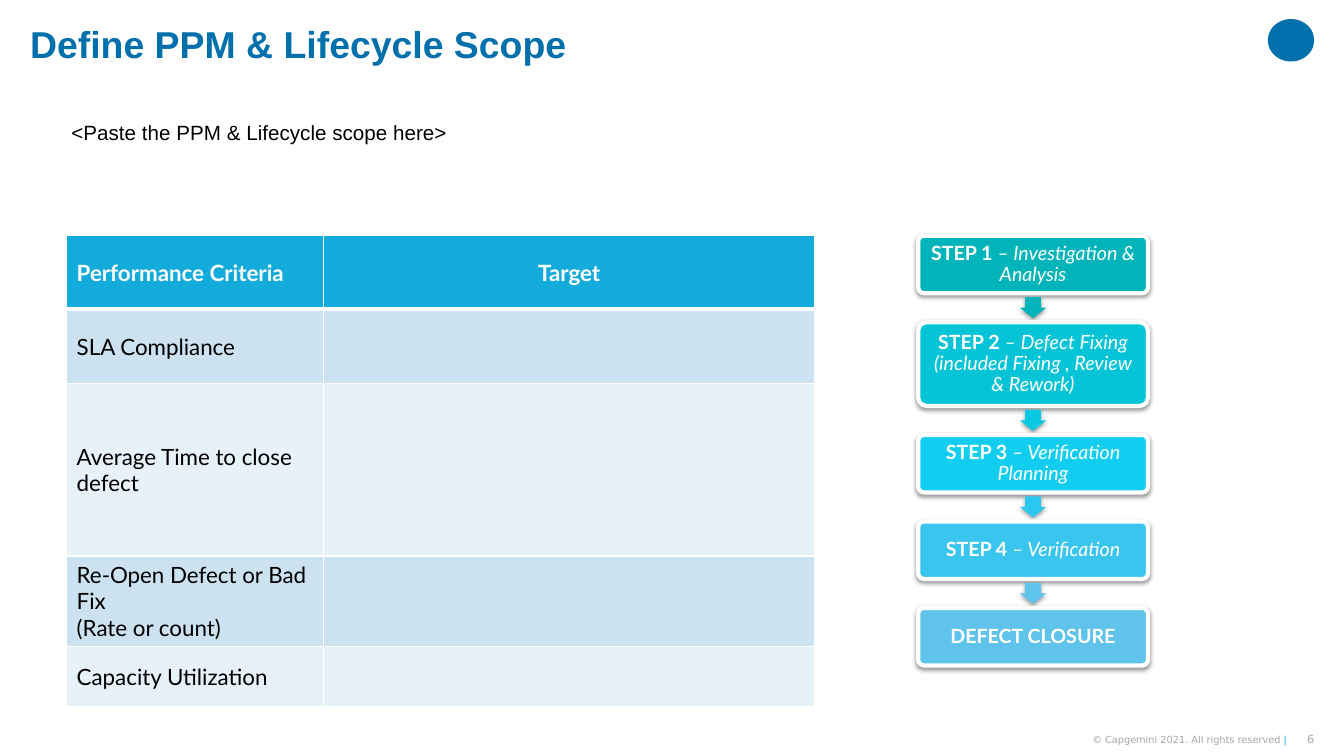
from dataclasses import dataclass

import lxml.etree
import pptx
import pptx.dml.color
import pptx.enum.shapes
import pptx.enum.text
import pptx.oxml.ns
import pptx.util

Cm = pptx.util.Cm
Pt = pptx.util.Pt
Align = pptx.enum.text.PP_ALIGN
Anchor = pptx.enum.text.MSO_ANCHOR
Preset = pptx.enum.shapes.MSO_SHAPE
qn = pptx.oxml.ns.qn


@dataclass(frozen=True)
class Theme:
    navy: str = "0070AD"
    cyan: str = "12ABDB"
    white: str = "FFFFFF"
    black: str = "000000"
    grey: str = "A6A6A6"
    bands: tuple[str, str] = ("CCE2F1", "E7F1F8")
    heading_font: str = "Arial"
    body_font: str = "Lato"
    footer_font: str = "DejaVu Sans"
    title_size: float = 26.7
    note_size: float = 14.7
    table_size: float = 16
    step_size: float = 14
    number_size: float = 8
    footer_size: float = 7


THEME = Theme()


@dataclass(frozen=True)
class Span:
    text: str
    size: float
    font: str
    color: str
    bold: bool = False
    italic: bool = False


@dataclass(frozen=True)
class Box:
    left: float
    top: float
    width: float
    height: float

    def lengths(self) -> tuple:
        return Cm(self.left), Cm(self.top), Cm(self.width), Cm(self.height)


@dataclass(frozen=True)
class Step:
    name: str
    detail: str
    height: float
    color: str
    arrow_color: str = ""


@dataclass(frozen=True)
class Criterion:
    lines: tuple[str, ...]
    height: float


STEPS = (
    Step("STEP 1 ", "– Investigation & Analysis", 1.45, "00B4B9", "00B4B9"),
    Step("STEP 2 ", "– Defect Fixing (included Fixing , Review & Rework)", 2.11, "06C4D7", "09C8E1"),
    Step("STEP 3 ", "– Verification Planning", 1.45, "11CEF1", "2CC7EE"),
    Step("STEP 4 ", "– Verification", 1.45, "39C5ED", "5FC3EB"),
    Step("DEFECT CLOSURE", "", 1.45, "5FC3EB"),
)
CRITERIA = (
    Criterion(("SLA Compliance",), 1.88),
    Criterion(("Average Time to close defect",), 4.34),
    Criterion(("Re-Open Defect or Bad Fix", "(Rate or count)"), 1.93),
    Criterion(("Capacity Utilization",), 1.52),
)
HEADER_HEIGHT = 1.85
COLUMN_WIDTHS = (6.48, 12.37)
STEP_LEFT, STEP_TOP, STEP_WIDTH, STEP_GAP = 23.14, 5.94, 5.79, 0.73
ARROW_WIDTH, ARROW_HEIGHT = 0.66, 0.53


def rgb(color: str) -> pptx.dml.color.RGBColor:
    return pptx.dml.color.RGBColor.from_string(color)


def write(paragraph, spans: list[Span], align=Align.LEFT) -> None:
    paragraph.alignment = align
    for span in spans:
        run = paragraph.add_run()
        run.text = span.text
        run.font.size = Pt(span.size)
        run.font.name = span.font
        run.font.bold = span.bold
        run.font.italic = span.italic
        run.font.color.rgb = rgb(span.color)


def set_frame(frame, inset: float, anchor=Anchor.MIDDLE) -> None:
    frame.word_wrap = True
    frame.vertical_anchor = anchor
    frame.margin_left = frame.margin_right = Cm(inset)
    frame.margin_top = frame.margin_bottom = Cm(min(inset, 0.2))


def add_label(slide, box: Box, spans: list[Span], inset: float, align=Align.LEFT) -> None:
    frame = slide.shapes.add_textbox(*box.lengths()).text_frame
    set_frame(frame, inset)
    write(frame.paragraphs[0], spans, align)


def add_preset(slide, preset, box: Box, color: str):
    shape = slide.shapes.add_shape(preset, *box.lengths())
    shape.shadow.inherit = False
    shape.fill.solid()
    shape.fill.fore_color.rgb = rgb(color)
    shape.line.fill.background()
    return shape


def cast_shadow(shape) -> None:
    effects = shape._element.spPr.find(qn("a:effectLst"))
    shadow = lxml.etree.SubElement(
        effects, qn("a:outerShdw"), blurRad=str(Pt(3.1)), dist=str(Pt(1.6)), dir="5400000", rotWithShape="0"
    )
    color = lxml.etree.SubElement(shadow, qn("a:srgbClr"), val=THEME.black)
    lxml.etree.SubElement(color, qn("a:alpha"), val="38000")


def style_cell(cell, color: str, top: float, bottom: float) -> None:
    cell.fill.solid()
    cell.fill.fore_color.rgb = rgb(color)
    cell.vertical_anchor = Anchor.MIDDLE
    properties = cell._tc.get_or_add_tcPr()
    edges = (("a:lnL", 1), ("a:lnR", 1), ("a:lnT", top), ("a:lnB", bottom))
    for position, (tag, width) in enumerate(edges):
        edge = lxml.etree.Element(qn(tag), w=str(Pt(width)))
        solid = lxml.etree.SubElement(edge, qn("a:solidFill"))
        lxml.etree.SubElement(solid, qn("a:srgbClr"), val=THEME.white)
        properties.insert(position, edge)


def add_criteria_table(slide) -> None:
    heights = [HEADER_HEIGHT] + [criterion.height for criterion in CRITERIA]
    box = Box(1.68, 5.94, sum(COLUMN_WIDTHS), sum(heights))
    table = slide.shapes.add_table(len(heights), len(COLUMN_WIDTHS), *box.lengths()).table
    for column, width in zip(table.columns, COLUMN_WIDTHS):
        column.width = Cm(width)
    for index, (row, height) in enumerate(zip(table.rows, heights)):
        row.height = Cm(height)
        color = THEME.bands[(index - 1) % 2] if index else THEME.cyan
        for cell in row.cells:
            style_cell(cell, color, 3 if index == 1 else 1, 1 if index else 3)
    headings = (("Performance Criteria", Align.LEFT), ("Target", Align.CENTER))
    for cell, (heading, align) in zip(table.rows[0].cells, headings):
        span = Span(heading, THEME.table_size, THEME.body_font, THEME.white, bold=True)
        write(cell.text_frame.paragraphs[0], [span], align)
    for index, criterion in enumerate(CRITERIA, start=1):
        frame = table.cell(index, 0).text_frame
        for number, line in enumerate(criterion.lines):
            paragraph = frame.add_paragraph() if number else frame.paragraphs[0]
            write(paragraph, [Span(line, THEME.table_size, THEME.body_font, THEME.black)])


def add_steps(slide) -> None:
    top = STEP_TOP
    for step in STEPS:
        card = add_preset(
            slide, Preset.ROUNDED_RECTANGLE, Box(STEP_LEFT, top, STEP_WIDTH, step.height), step.color
        )
        card.adjustments[0] = 0.1
        card.line.color.rgb = rgb(THEME.white)
        card.line.width = Pt(3)
        cast_shadow(card)
        set_frame(card.text_frame, 0.2)
        spans = [Span(step.name, THEME.step_size, THEME.body_font, THEME.white, bold=True)]
        if step.detail:
            spans.append(Span(step.detail, THEME.step_size, THEME.body_font, THEME.white, italic=True))
        paragraph = card.text_frame.paragraphs[0]
        paragraph.line_spacing = 0.9
        write(paragraph, spans, Align.CENTER)
        top += step.height
        if step.arrow_color:
            left = STEP_LEFT + (STEP_WIDTH - ARROW_WIDTH) / 2
            box = Box(left, top + (STEP_GAP - ARROW_HEIGHT) / 2, ARROW_WIDTH, ARROW_HEIGHT)
            arrow = add_preset(slide, Preset.DOWN_ARROW, box, step.arrow_color)
            arrow.adjustments[0] = 0.6
            arrow.adjustments[1] = 0.5
            cast_shadow(arrow)
        top += STEP_GAP


def add_heading(slide) -> None:
    title = slide.shapes.title
    title.left, title.top, title.width, title.height = Box(0.51, 0.56, 31.22, 1.24).lengths()
    set_frame(title.text_frame, 0.25)
    title.text_frame.auto_size = pptx.enum.text.MSO_AUTO_SIZE.NONE
    paragraph = title.text_frame.paragraphs[0]
    paragraph.line_spacing = 0.9
    heading = Span("Define PPM & Lifecycle Scope", THEME.title_size, THEME.heading_font, THEME.navy, bold=True)
    write(paragraph, [heading])
    prompt = Span("<Paste the PPM & Lifecycle scope here>", THEME.note_size, THEME.heading_font, THEME.black)
    add_label(slide, Box(1.55, 2.9, 16.94, 0.89), [prompt], 0.25)


def add_footer(slide) -> None:
    number = Span("6", THEME.number_size, THEME.footer_font, THEME.grey)
    add_label(slide, Box(32.64, 18.47, 0.48, 0.33), [number], 0, Align.RIGHT)
    rights = Span("© Capgemini 2021. All rights reserved ", THEME.footer_size, THEME.footer_font, THEME.grey)
    divider = Span("|", THEME.footer_size, THEME.footer_font, THEME.cyan)
    add_label(slide, Box(25.04, 18.47, 7.39, 0.33), [rights, divider], 0, Align.RIGHT)


def main() -> None:
    deck = pptx.Presentation()
    deck.slide_width, deck.slide_height = Cm(33.87), Cm(19.05)
    slide = deck.slides.add_slide(deck.slide_layouts[5])
    add_preset(slide, Preset.OVAL, Box(31.95, 0.48, 1.17, 1.07), THEME.navy)
    add_footer(slide)
    add_heading(slide)
    add_criteria_table(slide)
    add_steps(slide)
    deck.save("out.pptx")


if __name__ == "__main__":
    main()
